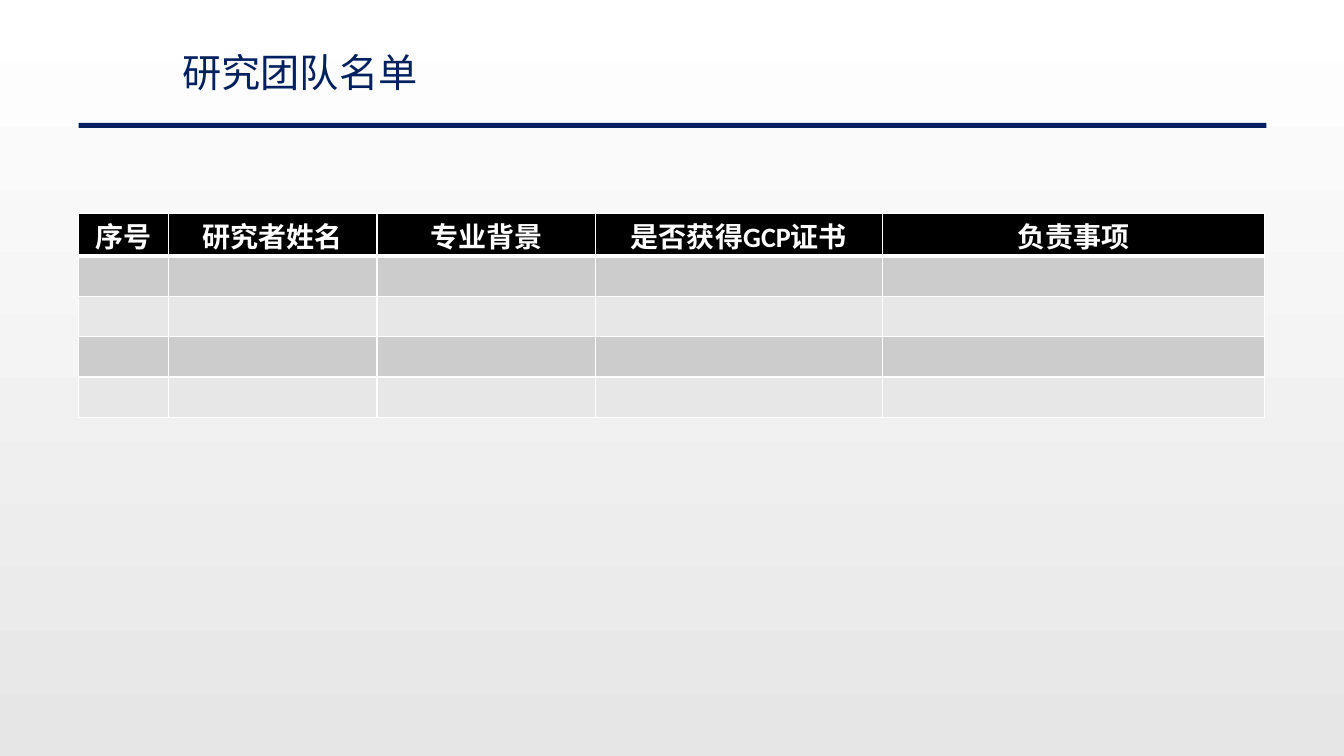
from lxml import etree
from pptx import Presentation
from pptx.dml.color import RGBColor
from pptx.enum import shapes, text
from pptx.oxml import ns
from pptx.util import Inches, Pt

NAVY = RGBColor(0x00, 0x20, 0x60)
BLACK = RGBColor(0x00, 0x00, 0x00)
WHITE = RGBColor(0xFF, 0xFF, 0xFF)
BACKGROUND_END = RGBColor(0xE7, 0xE6, 0xE6)
BANDS = (RGBColor(0xCC, 0xCC, 0xCC), RGBColor(0xE7, 0xE7, 0xE7))

CJK_FONT = "Noto Sans CJK SC"
LEFT, CONTENT_WIDTH = 0.78, 11.78
HEADINGS = ("序号", "研究者姓名", "专业背景", "是否获得GCP证书", "负责事项")
COLUMN_WIDTHS = (0.89, 2.07, 2.17, 2.84, 3.79)
MEMBER_ROWS = 4
HEADER_HEIGHT, ROW_HEIGHT = 0.42, 0.4


def write(frame, words, *, size, color, font, bold=False,
          align=text.PP_ALIGN.LEFT, line_spacing=None):
    paragraph = frame.paragraphs[0]
    paragraph.alignment = align
    if line_spacing:
        paragraph.line_spacing = Pt(line_spacing)
    run = paragraph.add_run()
    run.text = words
    run.font.size = Pt(size)
    run.font.bold = bold
    run.font.name = font
    run.font.color.rgb = color
    east_asian = etree.SubElement(run.font._element, ns.qn("a:ea"))
    east_asian.set("typeface", CJK_FONT)


def paint_background(slide):
    fill = slide.background.fill
    fill.gradient()
    fill.gradient_angle = 270
    for stop, color, position in zip(fill.gradient_stops, (WHITE, BACKGROUND_END), (0, 1)):
        stop.color.rgb = color
        stop.position = position


def add_heading(slide, words):
    title = slide.shapes.title
    title.left, title.top = Inches(1.71), Inches(0.6)
    title.width, title.height = Inches(3.43), Inches(0.42)
    frame = title.text_frame
    frame.auto_size = text.MSO_AUTO_SIZE.NONE
    frame.word_wrap = True
    frame.vertical_anchor = text.MSO_ANCHOR.MIDDLE
    write(frame, words, size=28, color=NAVY, font=CJK_FONT, line_spacing=19)


def add_rule(slide):
    rule = slide.shapes.add_shape(shapes.MSO_SHAPE.RECTANGLE, Inches(LEFT), Inches(1.22),
                                  Inches(CONTENT_WIDTH), Inches(0.05))
    rule.shadow.inherit = False
    rule.fill.solid()
    rule.fill.fore_color.rgb = NAVY
    rule.line.fill.background()


def format_cell(cell, color, bottom_width=1):
    """Fill the cell and give it white borders, widths in points."""
    cell.margin_top = cell.margin_bottom = 0
    cell.vertical_anchor = text.MSO_ANCHOR.BOTTOM
    properties = cell._tc.get_or_add_tcPr()
    for side, width in (("L", 1), ("R", 1), ("T", 1), ("B", bottom_width)):
        border = etree.SubElement(properties, ns.qn(f"a:ln{side}"), w=str(Pt(width)))
        fill = etree.SubElement(border, ns.qn("a:solidFill"))
        etree.SubElement(fill, ns.qn("a:srgbClr"), val=str(WHITE))
    cell.fill.solid()
    cell.fill.fore_color.rgb = color


def add_team_table(slide):
    height = HEADER_HEIGHT + MEMBER_ROWS * ROW_HEIGHT
    team = slide.shapes.add_table(MEMBER_ROWS + 1, len(HEADINGS), Inches(LEFT), Inches(2.12),
                                  Inches(CONTENT_WIDTH), Inches(height)).table
    for column, width in zip(team.columns, COLUMN_WIDTHS):
        column.width = Inches(width)
    for index, row in enumerate(team.rows):
        row.height = Inches(ROW_HEIGHT if index else HEADER_HEIGHT)
        for cell, heading in zip(row.cells, HEADINGS):
            if index:
                format_cell(cell, BANDS[(index - 1) % 2])
            else:
                format_cell(cell, BLACK, bottom_width=3)
                write(cell.text_frame, heading, size=20, color=WHITE, font="Calibri",
                      bold=True, align=text.PP_ALIGN.CENTER)


def main():
    deck = Presentation()
    deck.slide_width, deck.slide_height = Inches(13.33), Inches(7.5)
    slide = deck.slides.add_slide(deck.slide_layouts[5])
    paint_background(slide)
    add_rule(slide)
    add_heading(slide, "研究团队名单")
    add_team_table(slide)
    deck.save("out.pptx")


if __name__ == "__main__":
    main()
